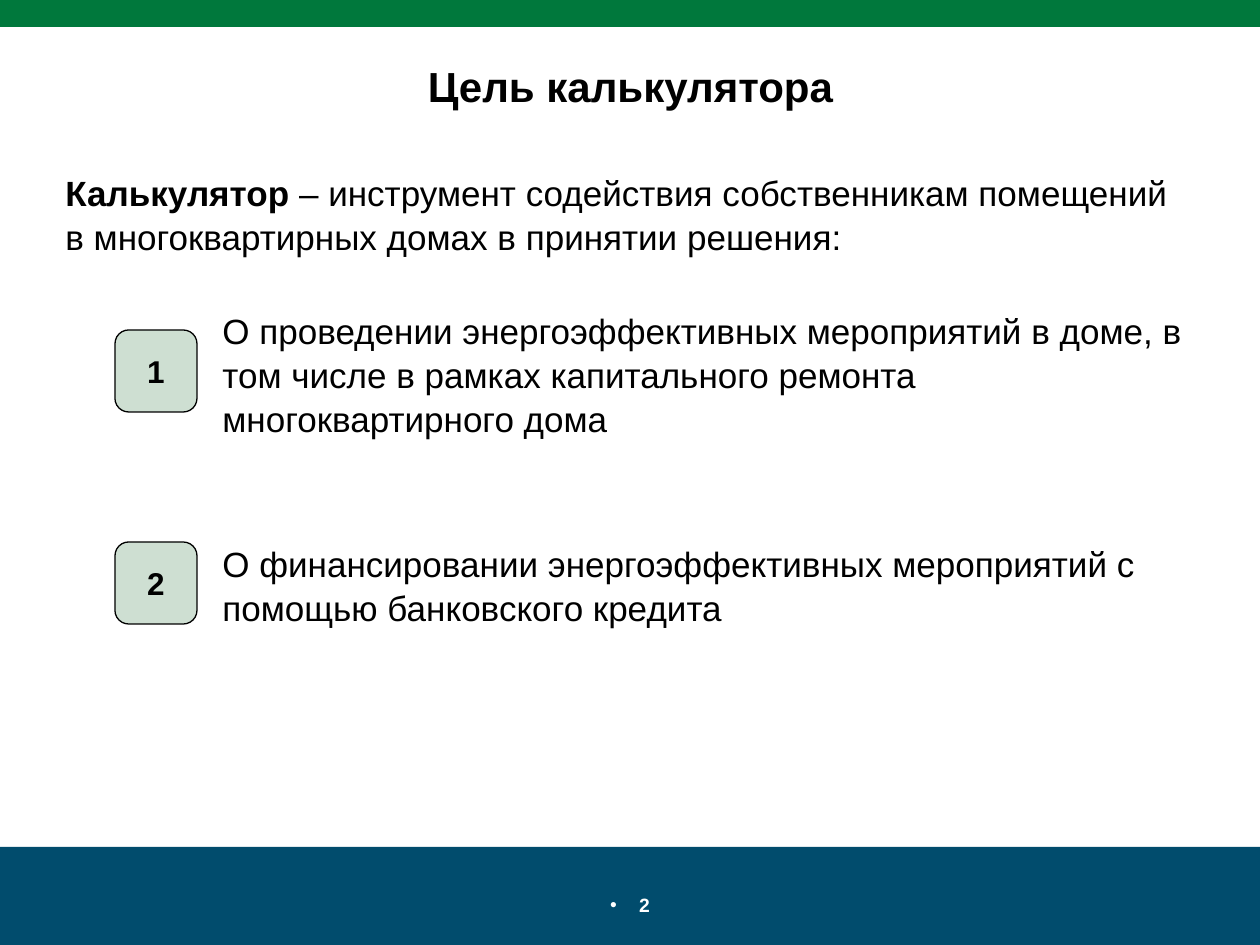
from lxml import etree
from pptx import Presentation
from pptx import util as u
from pptx.dml.color import RGBColor
from pptx.enum import shapes, text
from pptx.oxml.ns import qn

PX = 914400 // 126
WIDTH, HEIGHT = 1260, 945
FONT = "Arial"
BLACK = RGBColor(0x00, 0x00, 0x00)
WHITE = RGBColor(0xFF, 0xFF, 0xFF)
GREEN = RGBColor(0x00, 0x78, 0x3C)
NAVY = RGBColor(0x01, 0x4C, 0x6D)
PALE_GREEN = RGBColor(0xCE, 0xDF, 0xD2)

BADGE_SIZE = 82
GOALS = [
    # badge top, text top, text height, wording
    (330, 301, 140, "О проведении энергоэффективных мероприятий в доме, "
                    "в том числе в рамках капитального ремонта "
                    "многоквартирного дома"),
    (542, 534, 97, "О финансировании энергоэффективных мероприятий "
                   "с помощью банковского кредита"),
]


def px(*values):
    return [u.Emu(v * PX) for v in values]


def write(sp, *runs, size=20, color=BLACK, bold=False, spacing=1.0,
          align=text.PP_ALIGN.LEFT, anchor=text.MSO_ANCHOR.TOP, bullet_gap=0):
    """Fill a shape with one paragraph; each run is a (wording, bold) pair or a string."""
    tf = sp.text_frame
    tf.word_wrap = True
    tf.vertical_anchor = anchor
    p = tf.paragraphs[0]
    p.alignment = align
    p.line_spacing = spacing
    if bullet_gap:
        add_bullet(p, bullet_gap)
    for run in runs:
        wording, run_bold = (run, bold) if isinstance(run, str) else run
        r = p.add_run()
        r.text = wording
        r.font.name = FONT
        r.font.size = u.Pt(size)
        r.font.bold = run_bold
        r.font.color.rgb = color


def add_bullet(p, gap):
    pPr = p._p.get_or_add_pPr()
    pPr.set("marL", str(gap * PX))
    pPr.set("indent", str(-gap * PX))
    etree.SubElement(pPr, qn("a:buFont"), typeface=FONT)
    etree.SubElement(pPr, qn("a:buChar"), char="•")


def add_text(slide, box, *runs, **fmt):
    sp = slide.shapes.add_textbox(*px(*box))
    write(sp, *runs, **fmt)


def add_block(slide, kind, box, fill, line=None):
    sp = slide.shapes.add_shape(kind, *px(*box))
    sp.shadow.inherit = False
    sp.fill.solid()
    sp.fill.fore_color.rgb = fill
    if line is None:
        sp.line.fill.background()
    else:
        sp.line.color.rgb = line
        sp.line.width = u.Pt(0.75)
    return sp


def add_goal(slide, number, badge_top, text_top, text_height, wording):
    badge = add_block(slide, shapes.MSO_SHAPE.ROUNDED_RECTANGLE,
                      (115, badge_top, BADGE_SIZE, BADGE_SIZE), PALE_GREEN, BLACK)
    write(badge, str(number), size=18, bold=True,
          align=text.PP_ALIGN.CENTER, anchor=text.MSO_ANCHOR.MIDDLE)
    add_text(slide, (210, text_top, 992, text_height), wording, spacing=1.05)


def main():
    prs = Presentation()
    prs.slide_width, prs.slide_height = px(WIDTH, HEIGHT)
    slide = prs.slides.add_slide(prs.slide_layouts[6])

    add_block(slide, shapes.MSO_SHAPE.RECTANGLE, (0, 847, WIDTH, 98), NAVY)
    add_block(slide, shapes.MSO_SHAPE.RECTANGLE, (0, 0, WIDTH, 27), GREEN)
    add_text(slide, (500, 887, 260, 39), "2", size=11, color=WHITE, bold=True,
             align=text.PP_ALIGN.CENTER, bullet_gap=29)

    add_text(slide, (48, 54, 1165, 63), "Цель калькулятора", size=24, bold=True,
             align=text.PP_ALIGN.CENTER, anchor=text.MSO_ANCHOR.MIDDLE)
    add_text(slide, (53, 163, 1150, 97), ("Калькулятор", True),
             " – инструмент содействия собственникам помещений "
             "в многоквартирных домах в принятии решения:", spacing=1.05)
    for number, goal in enumerate(GOALS, start=1):
        add_goal(slide, number, *goal)

    prs.save("out.pptx")


if __name__ == "__main__":
    main()
